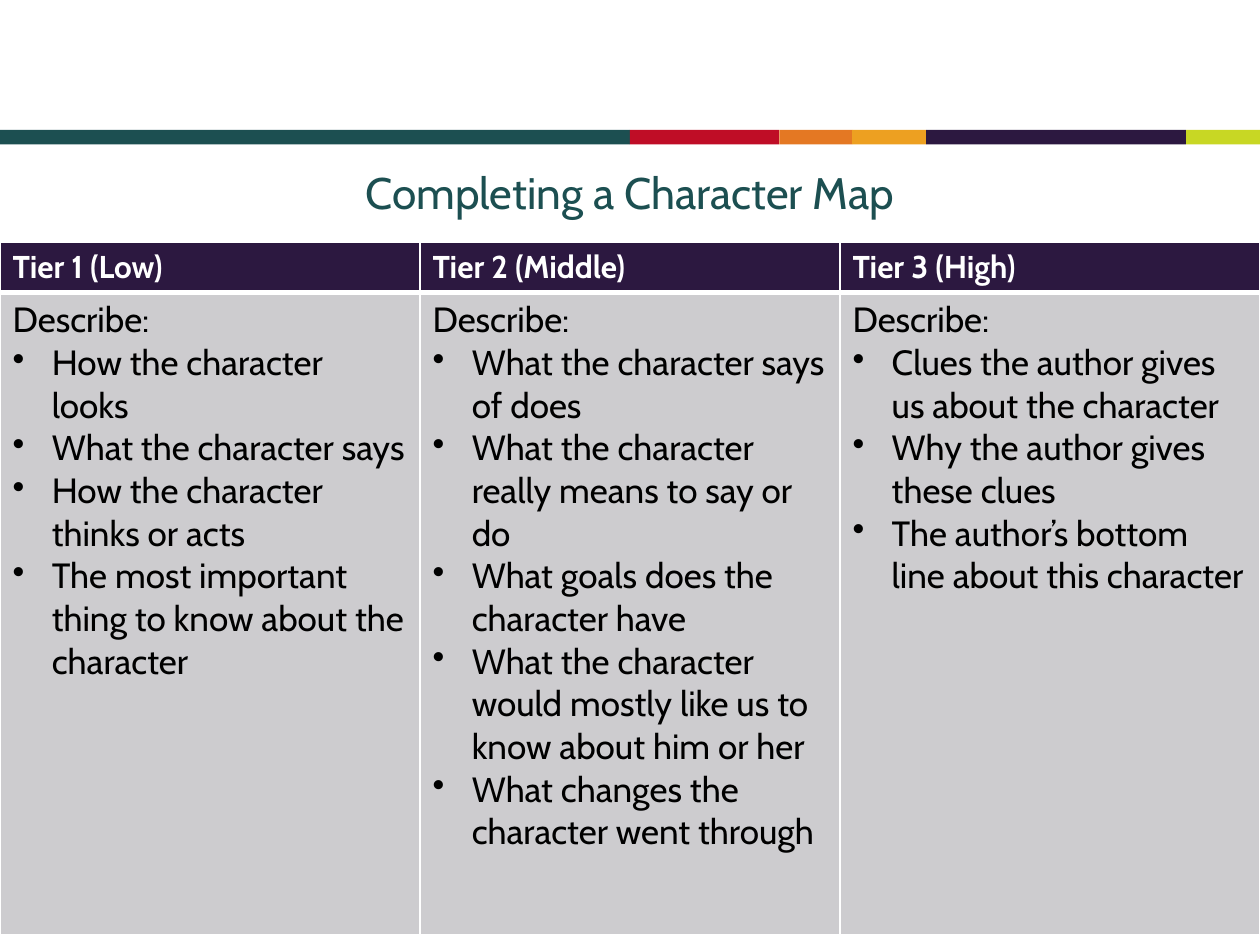
from dataclasses import dataclass
from itertools import product

from lxml.etree import SubElement
from pptx import Presentation
from pptx.dml.color import RGBColor as Color
from pptx.enum.shapes import MSO_SHAPE as Shape
from pptx.enum.text import MSO_ANCHOR as Anchor, PP_ALIGN as Align
from pptx.oxml.ns import qn
from pptx.util import Cm, Pt

TITLE = "Completing a Character Map"
LEAD = "Describe:"
TIERS = [
    ("Tier 1 (Low)", [
        "How the character looks",
        "What the character says",
        "How the character thinks or acts",
        "The most important thing to know about the character",
    ]),
    ("Tier 2 (Middle)", [
        "What the character says of does",
        "What the character really means to say or do",
        "What goals does the character have",
        "What the character would mostly like us to know about him or her",
        "What changes the character went through",
    ]),
    ("Tier 3 (High)", [
        "Clues the author gives us about the character",
        "Why the author gives these clues",
        "The author’s bottom line about this character",
    ]),
]


@dataclass(frozen=True)
class Theme:
    """Colours and type sizes of the slide."""
    font: str = "Cabin"
    teal: str = "1C4F51"
    red: str = "BF0D26"
    orange: str = "E47823"
    amber: str = "EDA021"
    purple: str = "2C1840"
    lime: str = "C8D724"
    grey: str = "CDCCCF"
    white: str = "FFFFFF"
    black: str = "000000"
    title_size: float = 25.2
    header_size: float = 18
    body_size: float = 20


THEME = Theme()
WIDTH, HEIGHT = 25.4, 19.05
BAND_TOP, BAND_HEIGHT = 2.62, 0.29
BAND = [
    (THEME.teal, 12.7), (THEME.red, 3.01), (THEME.orange, 1.47),
    (THEME.amber, 1.49), (THEME.purple, 5.24), (THEME.lime, 1.49),
]
TITLE_TOP, TITLE_HEIGHT = 3.18, 1.35
TABLE_TOP, ROW_HEIGHTS = 4.88, (1.02, 12.95)
INDENT = 0.79
THIN, THICK = 1, 3


def add_text(paragraph, text, size, color, bold=False):
    run = paragraph.add_run()
    run.text = text
    run.font.name = THEME.font
    run.font.size = Pt(size)
    run.font.bold = bold
    run.font.color.rgb = Color.from_string(color)


def add_bullet(paragraph):
    properties = paragraph._p.get_or_add_pPr()
    properties.set("marL", str(Cm(INDENT)))
    properties.set("indent", str(-Cm(INDENT)))
    SubElement(properties, qn("a:buChar"), char="•")


def style_cell(cell, fill, top, bottom):
    properties = cell._tc.get_or_add_tcPr()
    for side, width in zip("LRTB", (THIN, THIN, top, bottom)):
        line = SubElement(properties, qn(f"a:ln{side}"), w=str(Pt(width)))
        solid = SubElement(line, qn("a:solidFill"))
        SubElement(solid, qn("a:srgbClr"), val=THEME.white)
    cell.fill.solid()
    cell.fill.fore_color.rgb = Color.from_string(fill)


def add_band(slide):
    left = 0
    for color, width in BAND:
        shape = slide.shapes.add_shape(
            Shape.RECTANGLE, Cm(left), Cm(BAND_TOP), Cm(width), Cm(BAND_HEIGHT))
        shape.shadow.inherit = False
        shape.fill.solid()
        shape.fill.fore_color.rgb = Color.from_string(color)
        shape.line.fill.background()
        left += width


def add_title(slide):
    box = slide.shapes.add_textbox(0, Cm(TITLE_TOP), Cm(WIDTH), Cm(TITLE_HEIGHT))
    frame = box.text_frame
    frame.word_wrap = True
    frame.vertical_anchor = Anchor.BOTTOM
    paragraph = frame.paragraphs[0]
    paragraph.alignment = Align.CENTER
    add_text(paragraph, TITLE, THEME.title_size, THEME.teal)


def add_tiers(slide):
    table = slide.shapes.add_table(
        len(ROW_HEIGHTS), len(TIERS), 0, Cm(TABLE_TOP),
        Cm(WIDTH), Cm(sum(ROW_HEIGHTS))).table
    for row, height in zip(table.rows, ROW_HEIGHTS):
        row.height = Cm(height)
    row_styles = [(THEME.purple, THIN, THICK), (THEME.grey, THICK, THIN)]
    for row, column in product(range(len(ROW_HEIGHTS)), range(len(TIERS))):
        style_cell(table.cell(row, column), *row_styles[row])
    for column, (name, points) in enumerate(TIERS):
        header, body = (table.cell(row, column).text_frame for row in (0, 1))
        add_text(header.paragraphs[0], name, THEME.header_size, THEME.white, bold=True)
        add_text(body.paragraphs[0], LEAD, THEME.body_size, THEME.black)
        for point in points:
            paragraph = body.add_paragraph()
            add_bullet(paragraph)
            add_text(paragraph, point, THEME.body_size, THEME.black)


def main():
    presentation = Presentation()
    presentation.slide_width, presentation.slide_height = Cm(WIDTH), Cm(HEIGHT)
    slide = presentation.slides.add_slide(presentation.slide_layouts[6])
    add_band(slide)
    add_title(slide)
    add_tiers(slide)
    presentation.save("out.pptx")


if __name__ == "__main__":
    main()
